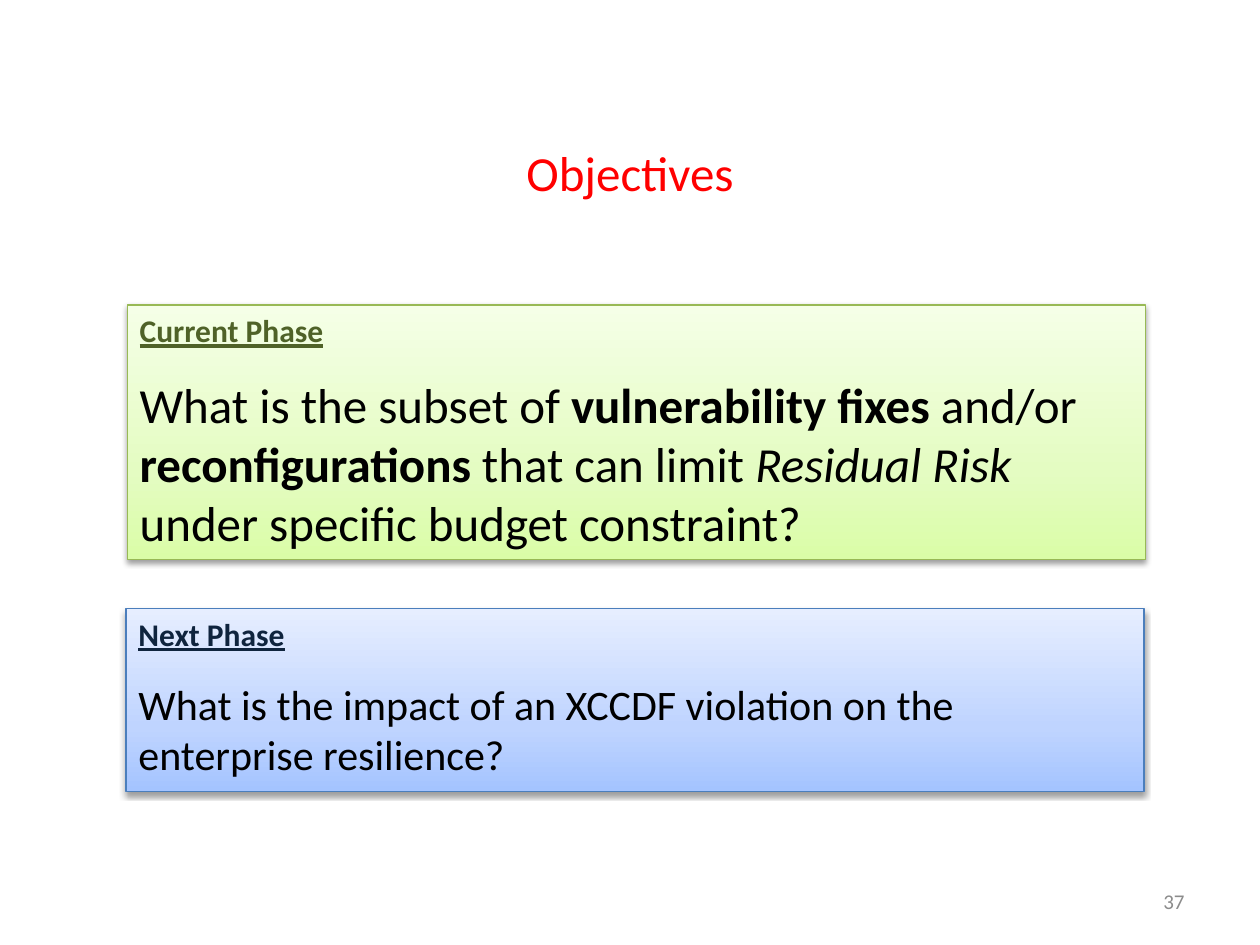
from copy import deepcopy

from lxml import etree
from pptx import Presentation
from pptx.dml.color import RGBColor
from pptx.enum.text import MSO_ANCHOR, MSO_AUTO_SIZE, PP_ALIGN
from pptx.enum.shapes import MSO_SHAPE
from pptx.oxml.ns import qn
from pptx.util import Inches, Pt

LEFT, CENTER, RIGHT = PP_ALIGN.LEFT, PP_ALIGN.CENTER, PP_ALIGN.RIGHT
TOP, MIDDLE = MSO_ANCHOR.TOP, MSO_ANCHOR.MIDDLE
NO_FIT = MSO_AUTO_SIZE.NONE
RECT = MSO_SHAPE.RECTANGLE
FONT = "Calibri"
TITLE_ONLY = 5


def color(code):
    return RGBColor.from_string(code)


def place(shape, left, top, width, height):
    shape.left, shape.top = Inches(left), Inches(top)
    shape.width, shape.height = Inches(width), Inches(height)


def setup(frame, anchor):
    frame.word_wrap = True
    frame.auto_size = NO_FIT
    frame.vertical_anchor = anchor


def write(para, text, size=28, ink="000000", bold=False, italic=False,
          line=False, align=LEFT):
    para.alignment = align
    run = para.add_run()
    run.text = text
    font = run.font
    font.name, font.size = FONT, Pt(size)
    font.color.rgb = color(ink)
    font.bold, font.italic, font.underline = bold, italic, line


def shade(shape, stops):
    """Fill with (position, colour) stops running from bottom to top."""
    fill = shape.fill
    fill.gradient()
    fill.gradient_angle = 90
    slots = next(shape._element.spPr.iter(qn("a:gsLst")))
    while len(slots) < len(stops):
        slots.append(deepcopy(slots[-1]))
    for slot, (pos, code) in zip(fill.gradient_stops, stops):
        slot.position = pos
        slot.color.rgb = color(code)


def drop(shape):
    """Cast a soft shadow straight down."""
    shape.shadow.inherit = False
    effects = shape._element.spPr.find(qn("a:effectLst"))
    outer = etree.SubElement(
        effects, qn("a:outerShdw"), blurRad=str(Pt(3.1)), dist=str(Pt(1.6)),
        dir="5400000", rotWithShape="0")
    black = etree.SubElement(outer, qn("a:srgbClr"), val="000000")
    etree.SubElement(black, qn("a:alpha"), val="38000")


def panel(slide, box, stops, edge, head, ink, size, parts):
    """Add a phase box; parts are (text, format) pairs of its question."""
    shape = slide.shapes.add_shape(RECT, *map(Inches, box))
    shade(shape, stops)
    shape.line.color.rgb = color(edge)
    shape.line.width = Pt(0.75)
    drop(shape)
    frame = shape.text_frame
    setup(frame, TOP)
    write(frame.paragraphs[0], head, size=18, ink=ink, bold=True, line=True)
    body = frame.add_paragraph()
    body.space_before = Pt(14.65)
    for text, style in parts:
        write(body, text, size=size, **style)


def main():
    deck = Presentation()
    deck.slide_width, deck.slide_height = Inches(10), Inches(7.5)
    slide = deck.slides.add_slide(deck.slide_layouts[TITLE_ONLY])

    title = slide.shapes.title
    place(title, 0.5, 1.08, 9, 0.47)
    setup(title.text_frame, TOP)
    write(title.text_frame.paragraphs[0], "Objectives", ink="FF0000",
          align=CENTER)

    number = slide.shapes.add_textbox(*map(Inches, (7.17, 6.95, 2.33, 0.4)))
    setup(number.text_frame, MIDDLE)
    write(number.text_frame.paragraphs[0], "37", size=12, ink="8C8C8C",
          align=RIGHT)

    bold, italic = {"bold": True}, {"italic": True}
    panel(slide, (1.01, 2.42, 8.08, 2.02),
          [(0, "DAFDA7"), (0.35, "E4FCC2"), (1, "F5FFE7")], "98B955",
          "Current Phase", "4F6228", 28,
          [("What is the subset of ", {}), ("vulnerability fixes ", bold),
           ("and/or ", {}), ("reconfigurations", bold),
           (" that can limit ", {}), ("Residual Risk", italic),
           (" under specific budget constraint?", {})])
    panel(slide, (1, 4.83, 8.08, 1.45),
          [(0, "A4C4FF"), (0.35, "BFD4FF"), (1, "E6EEFF")], "4B7EBC",
          "Next Phase", "0F243E", 24,
          [("What is the impact of an XCCDF violation on the "
            "enterprise resilience?", {})])

    deck.save("out.pptx")


if __name__ == "__main__":
    main()
